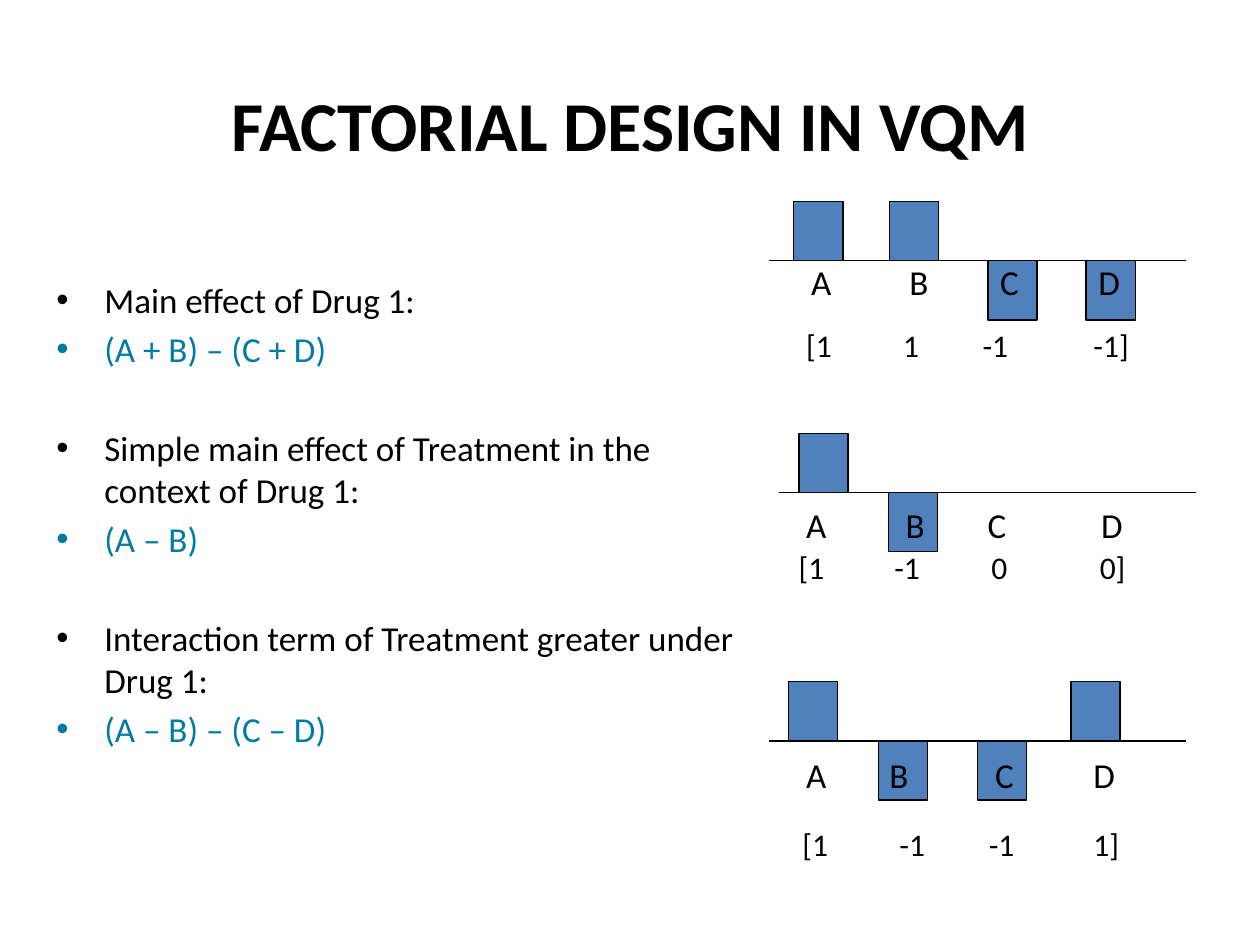
from lxml import etree
from pptx import Presentation
from pptx.dml.color import RGBColor
from pptx.enum.shapes import MSO_CONNECTOR, MSO_SHAPE
from pptx.enum.text import PP_ALIGN
from pptx.oxml.ns import qn
from pptx.util import Inches, Pt

RECTANGLE = MSO_SHAPE.RECTANGLE
STRAIGHT = MSO_CONNECTOR.STRAIGHT
LEFT, CENTER = PP_ALIGN.LEFT, PP_ALIGN.CENTER

BLACK, BLUE, TEAL = "000000", "4F81BD", "007BA2"
BAR_WIDTH, BAR_HEIGHT, AXIS_LENGTH = 0.39, 0.47, 3.31
INSET = 0.1  # default side margin of a text box


def color(hex_value):
    return RGBColor.from_string(hex_value)


class ContrastSlide:
    font = "Calibri"
    line_width = Pt(0.75)

    def __init__(self, slide):
        self.slide = slide

    def text_frame(self, left, top, width, height):
        box = self.slide.shapes.add_textbox(
            Inches(left), Inches(top), Inches(width), Inches(height))
        box.text_frame.word_wrap = True
        return box.text_frame

    def run(self, paragraph, text, size, hex_value=BLACK, bold=False):
        run = paragraph.add_run()
        run.text = text
        run.font.name = self.font
        run.font.size = Pt(size)
        run.font.bold = bold
        run.font.color.rgb = color(hex_value)

    def heading(self, text, left, top, width, height):
        paragraph = self.text_frame(left, top, width, height).paragraphs[0]
        paragraph.alignment = CENTER
        self.run(paragraph, text, 40, bold=True)

    def bullets(self, items, left, top, width, height):
        """Items are (text, colour, points of space before)."""
        frame = self.text_frame(left, top, width, height)
        for index, (text, hex_value, space) in enumerate(items):
            paragraph = frame.add_paragraph() if index else frame.paragraphs[0]
            paragraph.alignment = LEFT
            paragraph.space_before = Pt(space)
            properties = paragraph._p.get_or_add_pPr()
            properties.set("marL", str(Inches(0.38)))
            properties.set("indent", str(-Inches(0.38)))
            etree.SubElement(properties, qn("a:buFont"), typeface="Arial")
            etree.SubElement(properties, qn("a:buChar"), char="•")
            self.run(paragraph, text, 20, hex_value)

    def tabbed_row(self, entries, starts, top, size):
        """One line of entries, each beginning at its own slide position."""
        left = starts[0] - INSET
        paragraph = self.text_frame(left, top, 3.4, 0.42).paragraphs[0]
        tabs = etree.SubElement(paragraph._p.get_or_add_pPr(), qn("a:tabLst"))
        for start in starts[1:]:
            etree.SubElement(tabs, qn("a:tab"), algn="l",
                             pos=str(Inches(start - starts[0])))
        self.run(paragraph, "\t".join(entries), size)

    def bar(self, left, top):
        bar = self.slide.shapes.add_shape(
            RECTANGLE, Inches(left), Inches(top),
            Inches(BAR_WIDTH), Inches(BAR_HEIGHT))
        bar.shadow.inherit = False
        bar.fill.solid()
        bar.fill.fore_color.rgb = color(BLUE)
        bar.line.color.rgb = color(BLACK)
        bar.line.width = self.line_width

    def axis(self, left, level):
        axis = self.slide.shapes.add_connector(
            STRAIGHT, Inches(left), Inches(level),
            Inches(left + AXIS_LENGTH), Inches(level))
        axis.line.color.rgb = color(BLACK)
        axis.line.width = self.line_width
        etree.SubElement(axis._element.spPr, qn("a:effectLst"))

    def contrast(self, axis_left, level, bars, labels, weights):
        """Bars are (left, sign): positive ones stand on the axis."""
        for left, sign in bars:
            self.bar(left, level - BAR_HEIGHT if sign > 0 else level)
        self.axis(axis_left, level)
        self.tabbed_row("ABCD", *labels, 20)
        self.tabbed_row(*weights, 18)


def main():
    presentation = Presentation()
    presentation.slide_width = Inches(10)
    presentation.slide_height = Inches(7.5)
    page = ContrastSlide(
        presentation.slides.add_slide(presentation.slide_layouts[6]))

    # Title
    page.heading("FACTORIAL DESIGN IN VQM", 1.34, 0.6, 7.32, 0.77)

    # Effects and their formulas
    effects = [
        ("Main effect of Drug 1:", "(A + B) – (C + D)"),
        ("Simple main effect of Treatment in the context of Drug 1:",
         "(A – B)"),
        ("Interaction term of Treatment greater under Drug 1:",
         "(A – B) – (C – D)"),
    ]
    items = []
    for effect, formula in effects:
        items.append((effect, BLACK, 32.5 if items else 0))
        items.append((formula, TEAL, 4))
    page.bullets(items, 0.35, 2.16, 5.66, 4.34)

    # Main effect
    page.contrast(
        6.1, 2.07, [(6.3, 1), (7.06, 1), (7.84, -1), (8.62, -1)],
        labels=([6.44, 7.22, 7.94, 8.72], 2.02),
        weights=(["[1", "1", "-1", "-1]"], [6.4, 7.17, 7.8, 8.68], 2.54))

    # Simple main effect
    page.contrast(
        6.18, 3.91, [(6.34, 1), (7.05, -1)],
        labels=([6.4, 7.19, 7.84, 8.74], 3.95),
        weights=(["[1", "-1", "0", "0]"], [6.34, 7.1, 7.87, 8.73], 4.3))

    # Interaction
    page.contrast(
        6.1, 5.88, [(6.26, 1), (6.97, -1), (7.76, -1), (8.5, 1)],
        labels=([6.4, 7.06, 7.9, 8.68], 5.93),
        weights=(["[1", "-1", "-1", "1]"], [6.37, 7.14, 7.85, 8.68], 6.5))

    presentation.save("out.pptx")


if __name__ == "__main__":
    main()
